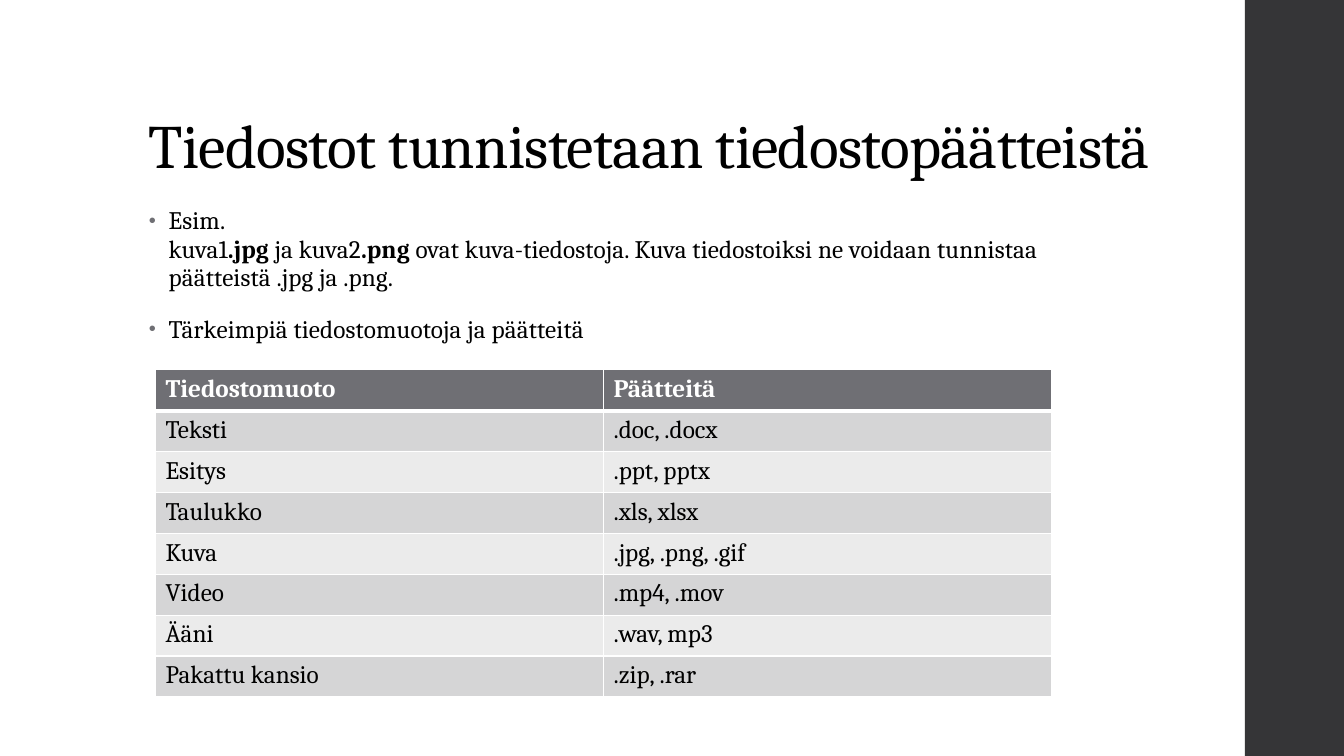
from lxml.etree import SubElement
from pptx import Presentation
from pptx.dml.color import RGBColor
from pptx.enum.shapes import MSO_SHAPE as Shape
from pptx.enum.text import MSO_ANCHOR as Anchor, PP_ALIGN as Align
from pptx.oxml.ns import qn
from pptx.util import Cm, Pt

COLORS = {
    "text": "000000",
    "white": "FFFFFF",
    "sidebar": "353537",
    "accent": "6F6F74",
    "odd_row": "D5D5D6",
    "even_row": "EBEBEB",
}

FORMATS = [
    ("Tiedostomuoto", "Päätteitä"),
    ("Teksti", ".doc, .docx"),
    ("Esitys", ".ppt, pptx"),
    ("Taulukko", ".xls, xlsx"),
    ("Kuva", ".jpg, .png, .gif"),
    ("Video", ".mp4, .mov"),
    ("Ääni", ".wav, mp3"),
    ("Pakattu kansio", ".zip, .rar"),
]


def rgb(name):
    return RGBColor.from_string(COLORS[name])


def add_color(parent, name):
    SubElement(parent, qn("a:srgbClr"), val=COLORS[name])


def add_bullet(para):
    """Give the paragraph a hanging grey bullet."""
    properties = para._p.get_or_add_pPr()
    properties.set("marL", str(Cm(0.5)))
    properties.set("indent", str(-Cm(0.5)))
    add_color(SubElement(properties, qn("a:buClr")), "accent")
    SubElement(properties, qn("a:buSzPct"), val="80000")
    SubElement(properties, qn("a:buFont"), typeface="Arial")
    SubElement(properties, qn("a:buChar"), char="•")


def add_borders(cell, bottom):
    """Draw white cell borders; only the bottom width varies."""
    properties = cell._tc.get_or_add_tcPr()
    for side, width in (("L", 1), ("R", 1), ("T", 1), ("B", bottom)):
        line = SubElement(properties, qn(f"a:ln{side}"), w=str(Pt(width)))
        add_color(SubElement(line, qn("a:solidFill")), "white")


class SlideBuilder:
    def __init__(self, page, font="Cambria"):
        self.page = page
        self.font = font

    def add_text(self, para, text, size=18, color="text", bold=False,
                 spacing=0):
        """Add a run; spacing is in hundredths of a point."""
        span = para.add_run()
        span.text = text
        span.font.name = self.font
        span.font.size = Pt(size)
        span.font.bold = bold
        span.font.color.rgb = rgb(color)
        if spacing:
            span._r.get_or_add_rPr().set("spc", str(spacing))

    def rectangle(self, left, top, width, height, color):
        box = self.page.shapes.add_shape(
            Shape.RECTANGLE, Cm(left), Cm(top), Cm(width), Cm(height))
        box.shadow.inherit = False
        box.fill.solid()
        box.fill.fore_color.rgb = rgb(color)
        box.line.fill.background()

    def text_frame(self, left, top, width, height, anchor=Anchor.TOP):
        box = self.page.shapes.add_textbox(
            Cm(left), Cm(top), Cm(width), Cm(height))
        box.text_frame.word_wrap = True
        box.text_frame.vertical_anchor = anchor
        return box.text_frame

    def title(self, text):
        frame = self.text_frame(3.5, 1.02, 26.92, 3.68, Anchor.BOTTOM)
        para = frame.paragraphs[0]
        para.alignment = Align.LEFT
        para.line_spacing = 0.9
        self.add_text(para, text, size=44, spacing=-50)

    def bullets(self, items):
        """Each item is a list of lines, each line a list of (text, bold)."""
        frame = self.text_frame(3.5, 5.08, 23.88, 4.45)
        for index, lines in enumerate(items):
            para = frame.add_paragraph() if index else frame.paragraphs[0]
            para.line_spacing = 0.95
            para.space_before = Pt(14)
            para.space_after = Pt(2)
            add_bullet(para)
            for number, line in enumerate(lines):
                if number:
                    para.add_line_break()
                for text, bold in line:
                    self.add_text(para, text, bold=bold, spacing=10)

    def table(self, rows, left, top, column_width, row_height):
        columns = len(rows[0])
        table = self.page.shapes.add_table(
            len(rows), columns, Cm(left), Cm(top),
            Cm(column_width * columns), Cm(row_height * len(rows))).table
        for column in table.columns:
            column.width = Cm(column_width)
        for index, values in enumerate(rows):
            table.rows[index].height = Cm(row_height)
            header = index == 0
            band = "odd_row" if index % 2 else "even_row"
            for position, text in enumerate(values):
                cell = table.cell(index, position)
                add_borders(cell, bottom=3 if header else 1)
                cell.fill.solid()
                cell.fill.fore_color.rgb = rgb("accent" if header else band)
                self.add_text(cell.text_frame.paragraphs[0], text, bold=header,
                              color="white" if header else "text")


def main():
    deck = Presentation()
    deck.slide_width, deck.slide_height = Cm(33.87), Cm(19.05)
    builder = SlideBuilder(deck.slides.add_slide(deck.slide_layouts[6]))

    builder.rectangle(31.37, 0, 2.5, 19.05, "sidebar")
    builder.title("Tiedostot tunnistetaan tiedostopäätteistä")
    builder.bullets([
        [
            [("Esim. ", False)],
            [("kuva1", False), (".jpg", True), (" ja kuva2", False),
             (".png", True),
             (" ovat kuva-tiedostoja. Kuva tiedostoiksi ne voidaan tunnistaa "
              "päätteistä .jpg ja .png.", False)],
        ],
        [[("Tärkeimpiä tiedostomuotoja ja päätteitä", False)]],
    ])
    builder.table(FORMATS, left=3.92, top=9.32, column_width=11.29,
                  row_height=1.03)
    deck.save("out.pptx")


if __name__ == "__main__":
    main()
